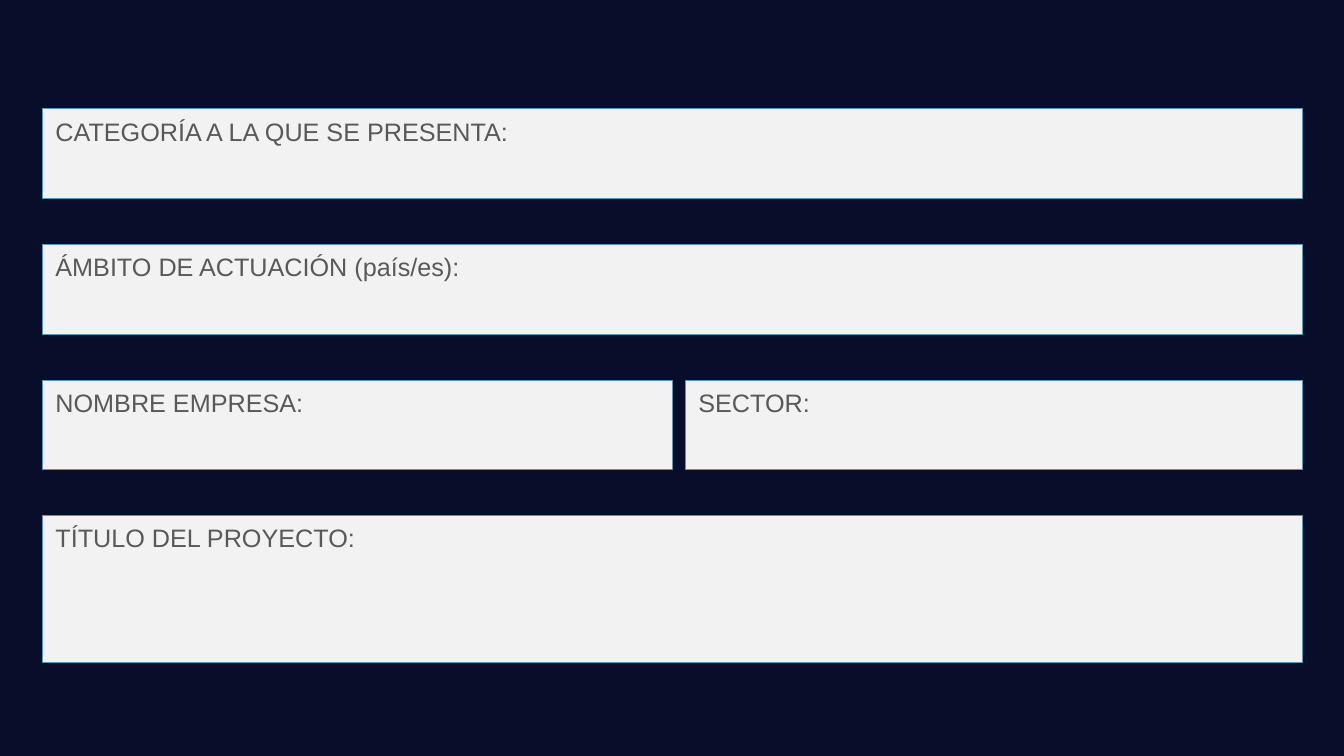
from dataclasses import dataclass

from pptx import Presentation
from pptx.dml.color import RGBColor
from pptx.enum.shapes import MSO_SHAPE as Preset
from pptx.enum.text import MSO_ANCHOR as Anchor, PP_ALIGN as Align
from pptx.util import Inches, Pt


@dataclass(frozen=True)
class Theme:
    background: RGBColor = RGBColor.from_string("080E29")
    panel: RGBColor = RGBColor.from_string("F2F2F2")
    border: RGBColor = RGBColor.from_string("5994BC")
    label: RGBColor = RGBColor.from_string("595959")
    font: str = "Arial"
    label_size: Pt = Pt(18)
    border_width: Pt = Pt(0.75)
    inset_x: Inches = Inches(0.13)
    inset_y: Inches = Inches(0.07)


@dataclass(frozen=True)
class Box:
    left: float
    top: float
    width: float
    height: float


THEME = Theme()
SLIDE_WIDTH, SLIDE_HEIGHT = 13.33, 7.5
FORM = Box(0.42, 1.08, 12.5, 5.49)
ROW_PITCH = 1.345
ROW_HEIGHT = 0.89
COLUMN_GAP = 0.13
FORM_ROWS = [
    [("CATEGORÍA A LA QUE SE PRESENTA:", 1)],
    [("ÁMBITO DE ACTUACIÓN (país/es):", 1)],
    [("NOMBRE EMPRESA:", 0.505), ("SECTOR:", 0.495)],
    [("TÍTULO DEL PROYECTO:", 1)],
]


def add_field(slide, box, label):
    field = slide.shapes.add_shape(
        Preset.RECTANGLE,
        Inches(box.left), Inches(box.top), Inches(box.width), Inches(box.height),
    )
    field.shadow.inherit = False
    field.fill.solid()
    field.fill.fore_color.rgb = THEME.panel
    field.line.color.rgb = THEME.border
    field.line.width = THEME.border_width

    frame = field.text_frame
    frame.word_wrap = True
    frame.vertical_anchor = Anchor.TOP
    frame.margin_left = frame.margin_right = THEME.inset_x
    frame.margin_top = frame.margin_bottom = THEME.inset_y
    paragraph = frame.paragraphs[0]
    paragraph.alignment = Align.LEFT
    run = paragraph.add_run()
    run.text = label
    run.font.name = THEME.font
    run.font.size = THEME.label_size
    run.font.color.rgb = THEME.label


def add_row(slide, box, fields):
    usable_width = box.width - COLUMN_GAP * (len(fields) - 1)
    left = box.left
    for label, share in fields:
        width = usable_width * share
        add_field(slide, Box(left, box.top, width, box.height), label)
        left += width + COLUMN_GAP


def add_form(slide, box, rows):
    last = len(rows) - 1
    for index, fields in enumerate(rows):
        offset = index * ROW_PITCH
        height = box.height - offset if index == last else ROW_HEIGHT
        add_row(slide, Box(box.left, box.top + offset, box.width, height), fields)


def main():
    deck = Presentation()
    deck.slide_width = Inches(SLIDE_WIDTH)
    deck.slide_height = Inches(SLIDE_HEIGHT)
    blank_layout = deck.slide_layouts[6]
    slide = deck.slides.add_slide(blank_layout)
    slide.background.fill.solid()
    slide.background.fill.fore_color.rgb = THEME.background
    add_form(slide, FORM, FORM_ROWS)
    deck.save("out.pptx")


if __name__ == "__main__":
    main()
